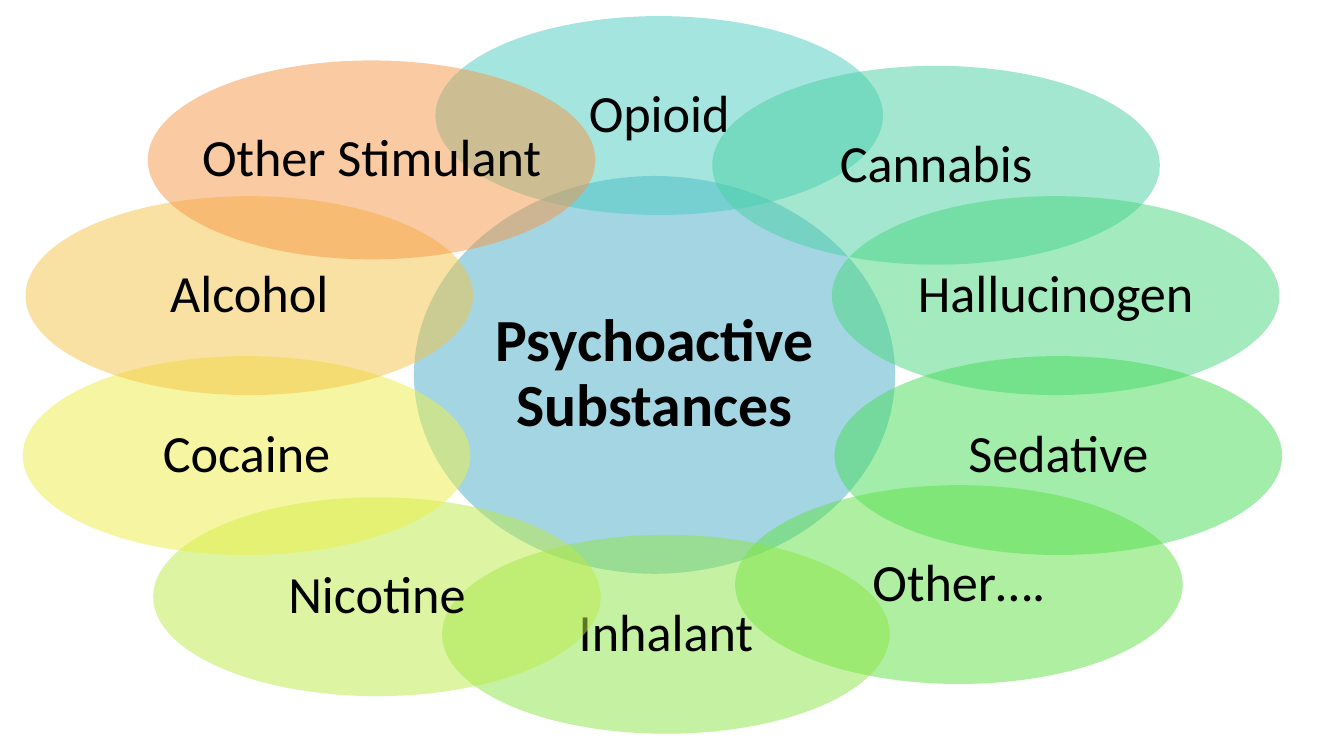
import pptx
import pptx.dml.color
import pptx.enum.shapes
import pptx.enum.text
import pptx.oxml.ns
import pptx.util
from lxml import etree
from pptx.util import Inches

COLORS = {
    "text": "000000",
    "Psychoactive Substances": "4BACC6",
    "Opioid": "4ACCC3",
    "Cannabis": "49D1A3",
    "Hallucinogen": "48D77E",
    "Sedative": "47DC57",
    "Other….": "60E146",
    "Inhalant": "8DE646",
    "Nicotine": "BCEA46",
    "Cocaine": "EEEF46",
    "Alcohol": "F3C446",
    "Other Stimulant": "F79646",
}
PETAL_SIZE = (3.33, 1.48)
PETAL_CORNERS = {
    "Opioid": (3.24, 0.12),
    "Cannabis": (5.3, 0.49),
    "Hallucinogen": (6.19, 1.46),
    "Sedative": (6.21, 2.65),
    "Other….": (5.47, 3.61),
    "Inhalant": (3.29, 3.98),
    "Nicotine": (1.14, 3.7),
    "Cocaine": (0.17, 2.65),
    "Alcohol": (0.19, 1.46),
    "Other Stimulant": (1.1, 0.45),
}


def rgb(name):
    """Return the named colour."""
    return pptx.dml.color.RGBColor.from_string(COLORS[name])


def fill_translucent(ellipse, name, percent=50):
    """Fill an ellipse with a named colour at the given opacity."""
    ellipse.fill.solid()
    ellipse.fill.fore_color.rgb = rgb(name)
    tint = ellipse.element.spPr.find(".//" + pptx.oxml.ns.qn("a:srgbClr"))
    alpha = etree.SubElement(tint, pptx.oxml.ns.qn("a:alpha"))
    alpha.set("val", str(percent * 1000))


def write_label(ellipse, label, size, bold, wrap):
    """Write a centred label in an ellipse."""
    frame = ellipse.text_frame
    frame.word_wrap = wrap
    frame.vertical_anchor = pptx.enum.text.MSO_ANCHOR.MIDDLE
    frame.margin_left = frame.margin_right = Inches(0.04)
    frame.margin_top = frame.margin_bottom = Inches(0.04)
    paragraph = frame.paragraphs[0]
    paragraph.alignment = pptx.enum.text.PP_ALIGN.CENTER
    paragraph.line_spacing = 0.9
    run = paragraph.add_run()
    run.text = label
    run.font.name = "Calibri"
    run.font.size = pptx.util.Pt(size)
    run.font.bold = bold
    run.font.color.rgb = rgb("text")


def add_ellipse(slide, label, corner, extent, size=28, bold=False, wrap=False):
    """Add a labelled translucent ellipse."""
    ellipse = slide.shapes.add_shape(
        pptx.enum.shapes.MSO_SHAPE.OVAL, *map(Inches, corner + extent)
    )
    ellipse.shadow.inherit = False
    ellipse.line.fill.background()
    fill_translucent(ellipse, label)
    write_label(ellipse, label, size, bold, wrap)


def main():
    """Build the slide of substances around their common class."""
    deck = pptx.Presentation()
    deck.slide_width = Inches(10)
    deck.slide_height = Inches(10 * 9 / 16)
    slide = deck.slides.add_slide(deck.slide_layouts[6])
    add_ellipse(slide, "Psychoactive Substances", (3.08, 1.31), (3.58, 2.96),
                size=32, bold=True, wrap=True)
    for substance, corner in PETAL_CORNERS.items():
        add_ellipse(slide, substance, corner, PETAL_SIZE)
    deck.save("out.pptx")


if __name__ == "__main__":
    main()
